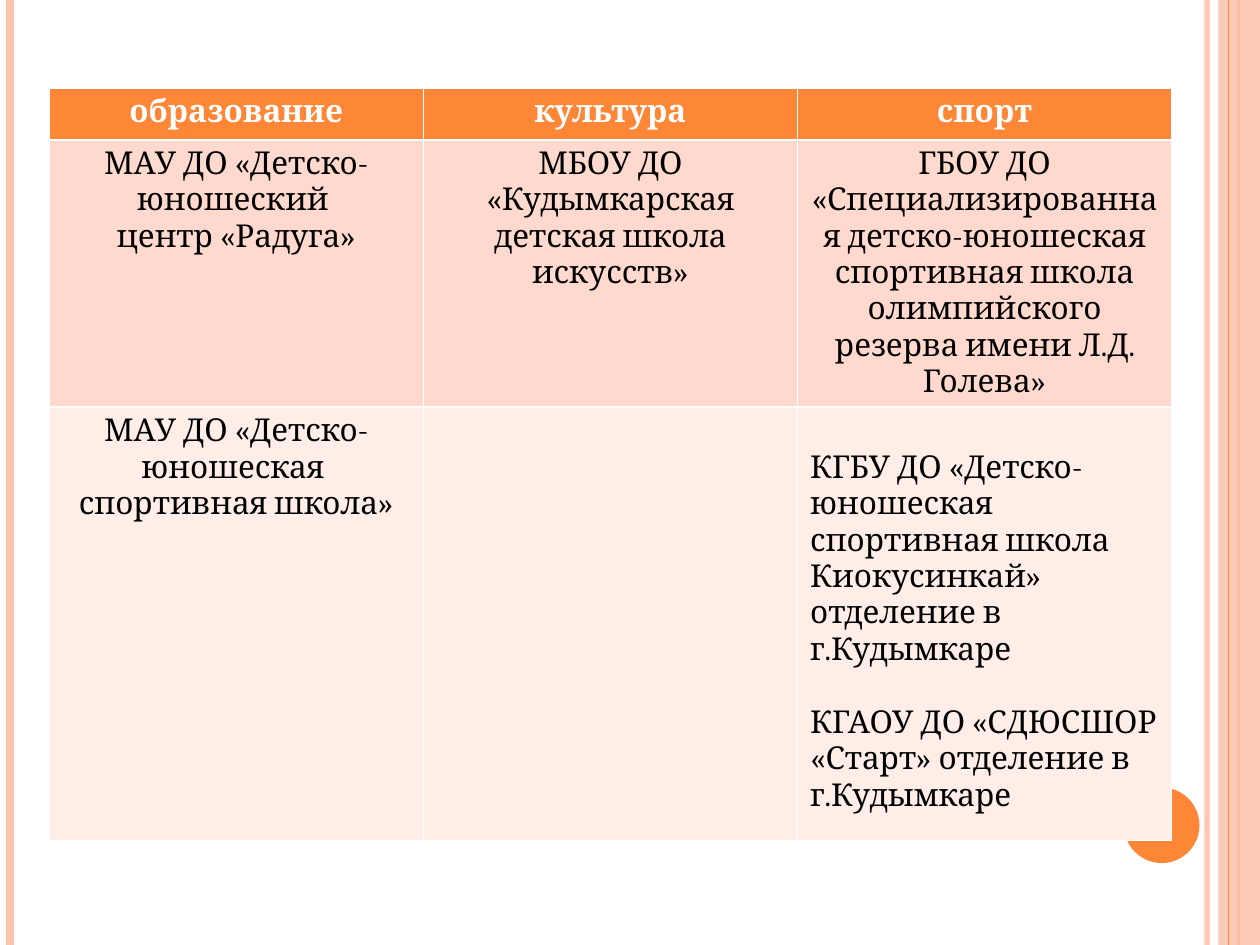
import lxml.etree
import pptx
import pptx.util
import pptx.dml.color
import pptx.enum.shapes
import pptx.enum.text
import pptx.oxml.ns

Inches, Pt = pptx.util.Inches, pptx.util.Pt
SHAPE = pptx.enum.shapes.MSO_SHAPE
ALIGN = pptx.enum.text.PP_ALIGN
qn = pptx.oxml.ns.qn

# Content: one list of paragraphs per cell
HEADERS = ["образование", "культура", "спорт"]
ROWS = [
    [["МАУ ДО «Детско-юношеский ", "центр «Радуга»"],
     ["МБОУ ДО «Кудымкарская детская школа искусств»"],
     ["ГБОУ ДО «Специализированная детско-юношеская спортивная школа "
      "олимпийского резерва имени Л.Д. Голева»"]],
    [["МАУ ДО «Детско-юношеская ", "спортивная школа»"],
     [],
     ["КГБУ ДО «Детско-юношеская спортивная школа Киокусинкай» "
      "отделение в г.Кудымкаре",
      "КГАОУ ДО «СДЮСШОР «Старт» отделение в г.Кудымкаре"]],
]
SPACED_CELL = (2, 2)  # left-aligned, with a line's gap above each paragraph

THEME = {
    "font": "Cambria", "size": 18, "line_gap": 21,
    "accent": "FE8637", "pale": "FEC3AE", "white": "FFFFFF", "text": "000000",
    "bands": ["FE8637", "FFD9CE", "FFEDE8"],
}

# Layout
SLIDE_W, SLIDE_H = 10, 7.5
TABLE = (0.39, 0.7, 8.91, 6.04)
ROW_HEIGHTS = [0.41, 1.93, 3.44]
# Vertical rules: x, colour, width, opacity in percent
SIDE_RULES = [(9.58, "pale", 3, 93), (0.08, "pale", 4.5, 100),
              (9.83, "accent", 1.5, 100)]
EDGE_RULE = (9.75, "accent", 0.75, 100)


def color(name):
    return pptx.dml.color.RGBColor.from_string(THEME.get(name, name))


def set_opacity(shape, percent):
    clr = next(shape._element.spPr.iter(qn("a:srgbClr")))
    alpha = lxml.etree.SubElement(clr, qn("a:alpha"))
    alpha.set("val", str(percent * 1000))


def add_rule(s, x, name, width, opacity):
    line = s.shapes.add_connector(
        pptx.enum.shapes.MSO_CONNECTOR.STRAIGHT,
        Inches(x), 0, Inches(x), Inches(SLIDE_H))
    line.line.color.rgb = color(name)
    line.line.width = Pt(width)
    lxml.etree.SubElement(line._element.spPr, qn("a:effectLst"))
    if opacity < 100:
        set_opacity(line, opacity)


def add_plain(s, kind, box, name):
    sp = s.shapes.add_shape(kind, *map(Inches, box))
    sp.shadow.inherit = False
    sp.fill.solid()
    sp.fill.fore_color.rgb = color(name)
    sp.line.fill.background()
    return sp


def fill_cell(cell, paragraphs, band, header, spaced):
    cell.fill.solid()
    cell.fill.fore_color.rgb = color(band)
    tf = cell.text_frame
    if spaced:
        cell.margin_top = Inches(0.05) + Pt(THEME["line_gap"])
    for i, text in enumerate(paragraphs):
        p = tf.add_paragraph() if i else tf.paragraphs[0]
        p.alignment = ALIGN.LEFT if spaced else ALIGN.CENTER
        if spaced and i:
            p.space_before = Pt(THEME["line_gap"])
        r = p.add_run()
        r.text = text
        r.font.name = THEME["font"]
        r.font.size = Pt(THEME["size"])
        r.font.bold = header
        r.font.color.rgb = color("white" if header else "text")


def add_schools_table(s):
    grid = [[[h] for h in HEADERS]] + ROWS
    frame = s.shapes.add_table(len(grid), len(HEADERS), *map(Inches, TABLE))
    table = frame.table
    for col in table.columns:
        col.width = Inches(TABLE[2] / len(HEADERS))
    for i, cells in enumerate(grid):
        table.rows[i].height = Inches(ROW_HEIGHTS[i])
        for j, paragraphs in enumerate(cells):
            fill_cell(table.cell(i, j), paragraphs, THEME["bands"][i],
                      i == 0, (i, j) == SPACED_CELL)
    frame.height = Inches(TABLE[3])


def main():
    prs = pptx.Presentation()
    prs.slide_width, prs.slide_height = Inches(SLIDE_W), Inches(SLIDE_H)
    s = prs.slides.add_slide(prs.slide_layouts[6])

    # Side decoration
    for rule in SIDE_RULES:
        add_rule(s, *rule)
    band = add_plain(s, SHAPE.RECTANGLE, (9.67, 0, 0.33, SLIDE_H), "pale")
    set_opacity(band, 87)
    add_rule(s, *EDGE_RULE)
    add_plain(s, SHAPE.OVAL, (8.92, 6.25, 0.6, 0.6), "accent")

    # Table of schools
    add_schools_table(s)
    prs.save("out.pptx")


if __name__ == "__main__":
    main()
